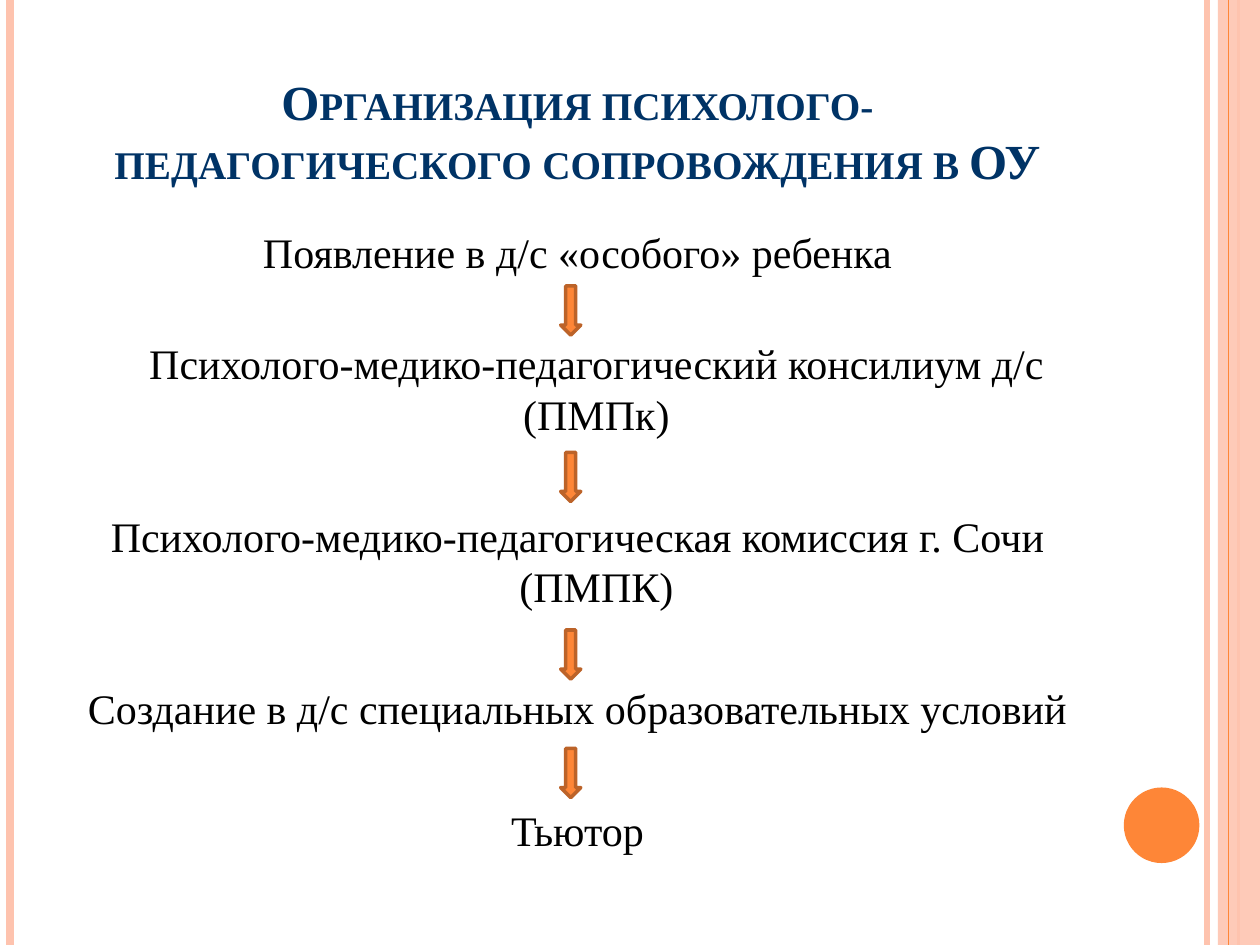
"""Builds a slide that shows the steps of psychological and pedagogical support."""
from lxml import etree
from pptx import Presentation
from pptx.dml.color import RGBColor
from pptx.enum.shapes import MSO_CONNECTOR, MSO_SHAPE
from pptx.enum.text import MSO_ANCHOR, PP_ALIGN
from pptx.oxml.ns import qn
from pptx.util import Pt

STRAIGHT = MSO_CONNECTOR.STRAIGHT
RECTANGLE, OVAL, DOWN_ARROW = MSO_SHAPE.RECTANGLE, MSO_SHAPE.OVAL, MSO_SHAPE.DOWN_ARROW
TOP, BOTTOM = MSO_ANCHOR.TOP, MSO_ANCHOR.BOTTOM
CENTER = PP_ALIGN.CENTER

THEME = {
    "accent": RGBColor.from_string("FE8637"),
    "pale": RGBColor.from_string("FEC3AE"),
    "outline": RGBColor.from_string("BC6329"),
    "title": {"name": "Times New Roman", "size": Pt(28), "bold": True},
    "title_color": RGBColor.from_string("003366"),
    "body": {"name": "Times New Roman", "size": Pt(24), "bold": False},
    "body_color": RGBColor.from_string("000000"),
}
WIDTH, HEIGHT = 720, 540
LINE, GAP, INDENT = 28.8, 6, 21.6

deck = Presentation()
deck.slide_width, deck.slide_height = Pt(WIDTH), Pt(HEIGHT)
page = deck.slides.add_slide(deck.slide_layouts[6])


def add_figure(kind, left, top, width, height, color):
    figure = page.shapes.add_shape(kind, Pt(left), Pt(top), Pt(width), Pt(height))
    figure.shadow.inherit = False
    figure.fill.solid()
    figure.fill.fore_color.rgb = color
    figure.line.fill.background()
    return figure


def add_text(top, height, anchor, paragraphs, style, line):
    box = page.shapes.add_textbox(Pt(36), Pt(top), Pt(588), Pt(height))
    frame = box.text_frame
    frame.word_wrap = True
    frame.vertical_anchor = anchor
    for number, (text, before, margin, indent) in enumerate(paragraphs):
        para = frame.add_paragraph() if number else frame.paragraphs[0]
        props = para._p.get_or_add_pPr()
        props.set("marL", str(Pt(margin)))
        props.set("indent", str(Pt(indent)))
        layout = {"alignment": CENTER, "space_before": Pt(before), "line_spacing": Pt(line)}
        for name, value in layout.items():
            setattr(para, name, value)
        span = para.add_run()
        span.text = text
        for name, value in THEME[style].items():
            setattr(span.font, name, value)
        span.font.color.rgb = THEME[style + "_color"]
        if style == "title":
            span._r.get_or_add_rPr().set("cap", "small")


band = add_figure(RECTANGLE, 696, 0, 24, HEIGHT, THEME["pale"])
shade = band.fill._xPr.find(qn("a:solidFill"))[0]
etree.SubElement(shade, qn("a:alpha")).set("val", "87000")

rails = [(689.8, "pale", 3), (5.8, "pale", 4.5), (707.8, "pale", 1.5), (702, "accent", 0.75)]
for x, color, weight in rails:
    rail = page.shapes.add_connector(STRAIGHT, Pt(x), Pt(0), Pt(x), Pt(HEIGHT))
    rail.line.color.rgb = THEME[color]
    rail.line.width = Pt(weight)
    etree.SubElement(rail._element.spPr, qn("a:effectLst"))

add_figure(OVAL, 642.2, 450, 43.2, 43.2, THEME["accent"])

title = "Организация психолого-педагогического сопровождения в ОУ"
add_text(21.6, 90, BOTTOM, [(title, 0, 0, 0)], "title", 33.6)

wide = LINE + 2 * GAP
steps = [
    ("Появление в д/с «особого» ребенка", 0, INDENT, -INDENT),
    ("Психолого-медико-педагогический консилиум д/с (ПМПк)", LINE + GAP, INDENT, 0),
    ("Психолого-медико-педагогическая комиссия г. Сочи (ПМПК)", wide, INDENT, -INDENT),
    ("Создание в д/с специальных образовательных условий", wide, INDENT, -INDENT),
    ("Тьютор", wide, INDENT, -INDENT),
]
add_text(126, 384, TOP, steps, "body", LINE)

for top in (163.4, 258.5, 360, 427.7):
    arrow = add_figure(DOWN_ARROW, 320.4, top, 11.5, 28.1, THEME["accent"])
    arrow.line.color.rgb = THEME["outline"]
    arrow.line.width = Pt(2)

deck.save("out.pptx")
